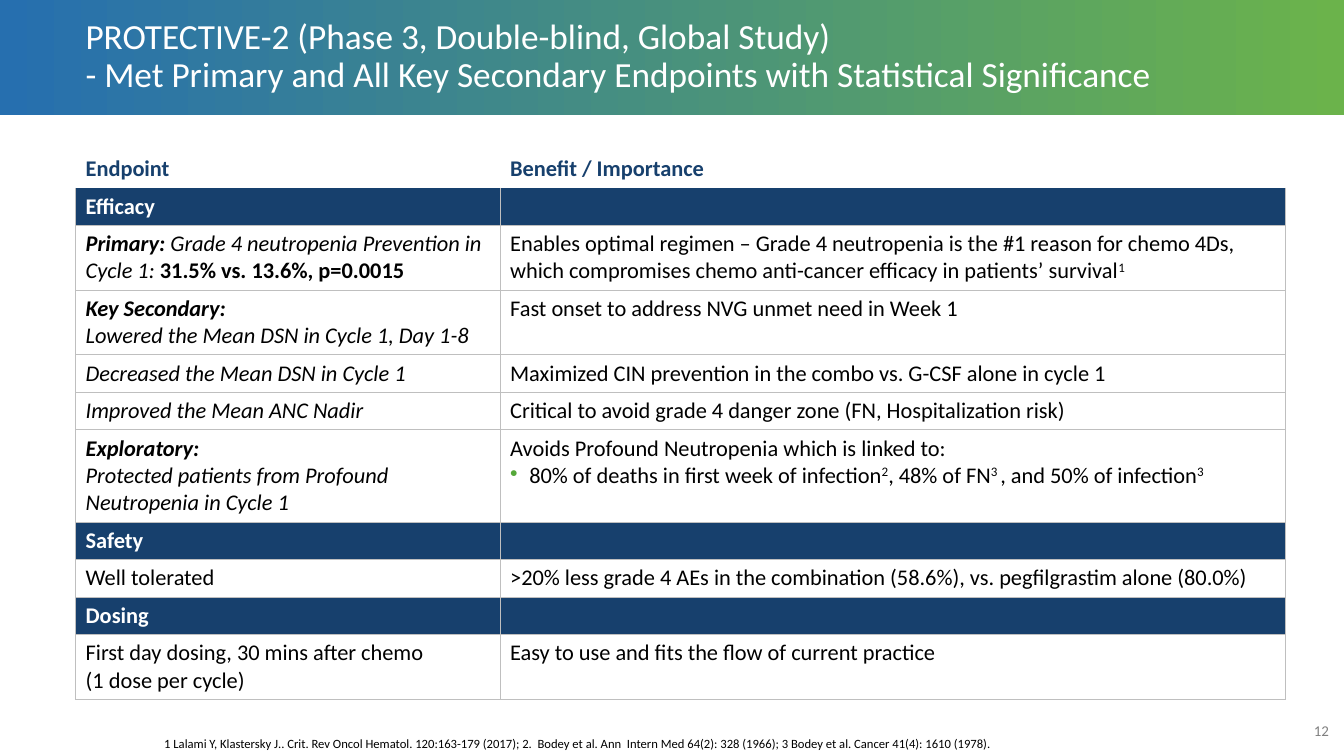
from lxml import etree
from pptx import Presentation
from pptx import util as u
from pptx.dml.color import RGBColor
from pptx.enum import shapes, text
from pptx.oxml import ns

WIDTH, HEIGHT = 13.33, 7.5
MARGIN, BANNER_HEIGHT = 0.75, 1.14
FONT = "Calibri"
LINE_HEIGHT, CELL_PADDING = 0.272, 0.1
BLUE = RGBColor(0x26, 0x6F, 0xAF)
GREEN = RGBColor(0x6B, 0xB3, 0x4B)
BULLET_GREEN = RGBColor(0x55, 0xA8, 0x39)
NAVY = RGBColor(0x17, 0x40, 0x6D)
RULE_GRAY = RGBColor(0xBF, 0xBF, 0xBF)
PAGE_GRAY = RGBColor(0x80, 0x80, 0x80)
WHITE = RGBColor(0xFF, 0xFF, 0xFF)
BLACK = RGBColor(0, 0, 0)

COLUMN_WIDTHS = (4.21, 7.79)
HEADINGS = ("Endpoint", "Benefit / Importance")
SECTIONS = [
    ("Efficacy", [
        (2, [[("Primary: ", "bi"), ("Grade 4 neutropenia Prevention in Cycle 1: ", "i"),
              ("31.5% vs. 13.6%, p=0.0015", "b")]],
         [[("Enables optimal regimen – Grade 4 neutropenia is the #1 reason for chemo 4Ds, "
            "which compromises chemo anti-cancer efficacy in patients’ survival", ""), ("1", "^")]]),
        (2, [[("Key Secondary:", "bi")], [("Lowered the Mean DSN in Cycle 1, Day 1-8", "i")]],
         [[("Fast onset to address NVG unmet need in Week 1", "")]]),
        (1, [[("Decreased the Mean DSN in Cycle 1", "i")]],
         [[("Maximized CIN prevention in the combo vs. G-CSF alone in cycle 1", "")]]),
        (1, [[("Improved the Mean ANC Nadir", "i")]],
         [[("Critical to avoid grade 4 danger zone (FN, Hospitalization risk)", "")]]),
        (3, [[("Exploratory:", "bi")],
             [("Protected patients from Profound Neutropenia in Cycle 1", "i")]],
         [[("Avoids Profound Neutropenia which is linked to:", "")],
          [("80% of deaths in first week of infection", "•"), ("2", "^"), (", 48% of FN", ""),
           ("3 ", "^"), (", and 50% of infection", ""), ("3", "^")]]),
    ]),
    ("Safety", [
        (1, [[("Well tolerated", "")]],
         [[(">20% less grade 4 AEs in the combination (58.6%), "
            "vs. pegfilgrastim alone (80.0%)", "")]]),
    ]),
    ("Dosing", [
        (2, [[("First day dosing, 30 mins after chemo", "")], [("(1 dose per cycle)", "")]],
         [[("Easy to use and fits the flow of current practice", "")]]),
    ]),
]


def inches(*lengths):
    """Convert lengths to slide units."""
    return [u.Inches(length) for length in lengths]


def add_bullet(para):
    """Give a paragraph a green bullet with a hanging indent."""
    properties = para._p.get_or_add_pPr()
    indent = u.Inches(0.19)
    properties.set("marL", str(indent))
    properties.set("indent", str(-indent))
    color = etree.SubElement(properties, ns.qn("a:buClr"))
    etree.SubElement(color, ns.qn("a:srgbClr")).set("val", str(BULLET_GREEN))
    etree.SubElement(properties, ns.qn("a:buChar")).set("char", "•")


def write(frame, paragraphs, size=16, color=BLACK, align=text.PP_ALIGN.LEFT, spacing=None):
    """Fill a frame with paragraphs of (wording, style marks) spans."""
    for index, spans in enumerate(paragraphs):
        para = frame.add_paragraph() if index else frame.paragraphs[0]
        para.alignment = align
        if spacing:
            para.line_spacing = spacing
        if spans[0][1] == "•":
            add_bullet(para)
        for wording, marks in spans:
            for number, line in enumerate(wording.split("\n")):
                if number:
                    para.add_line_break()
                span = para.add_run()
                span.text = line
                span.font.name = FONT
                span.font.size = u.Pt(size)
                span.font.color.rgb = color
                span.font.bold = "b" in marks
                span.font.italic = "i" in marks
                if "^" in marks:
                    span._r.get_or_add_rPr().set("baseline", "30000")


def add_text(page, box, wording, anchor=text.MSO_ANCHOR.MIDDLE, **style):
    """Place a wrapped text box holding one paragraph."""
    frame = page.shapes.add_textbox(*inches(*box)).text_frame
    frame.word_wrap = True
    frame.vertical_anchor = anchor
    write(frame, [[(wording, "")]], **style)


def add_banner(page, box):
    """Draw the gradient band with the title inside it."""
    left, top, width, height = box
    band = page.shapes.add_shape(shapes.MSO_SHAPE.RECTANGLE, *inches(*box))
    band.shadow.inherit = False
    band.line.fill.background()
    band.fill.gradient()
    band.fill.gradient_angle = 0
    for stop, color in zip(band.fill.gradient_stops, (BLUE, GREEN)):
        stop.color.rgb = color
    add_text(page, (left + MARGIN, top, 11.5, height),
             "PROTECTIVE-2 (Phase 3, Double-blind, Global Study)\n"
             "- Met Primary and All Key Secondary Endpoints with Statistical Significance",
             size=25.2, color=WHITE, spacing=0.9)


def set_borders(cell, visible_sides):
    """Rule the listed sides of a cell in gray and clear the others."""
    properties = cell._tc.get_or_add_tcPr()
    for side in "LRTB":
        line = etree.SubElement(properties, ns.qn(f"a:ln{side}"))
        line.set("w", str(u.Pt(0.75)))
        if side in visible_sides:
            fill = etree.SubElement(line, ns.qn("a:solidFill"))
            etree.SubElement(fill, ns.qn("a:srgbClr")).set("val", str(RULE_GRAY))
        else:
            etree.SubElement(line, ns.qn("a:noFill"))


def table_rows():
    """List each row as line count, cell paragraphs, text colour, fill and borders."""
    rows = [(1, [[[(heading, "b")]] for heading in HEADINGS], NAVY, None, "")]
    for number, (section, entries) in enumerate(SECTIONS):
        rows.append((1, [[[(section, "b")]], []], WHITE, NAVY, "LRTB" if number else "LRB"))
        for lines, endpoint, benefit in entries:
            rows.append((lines, [endpoint, benefit], BLACK, None, "LRTB"))
    return rows


def add_endpoint_table(page, box):
    """Build the table of endpoints and benefits."""
    rows = table_rows()
    table = page.shapes.add_table(len(rows), len(COLUMN_WIDTHS), *inches(*box)).table
    table.first_row = table.horz_banding = False
    for column, width in zip(table.columns, COLUMN_WIDTHS):
        column.width = u.Inches(width)
    for row, (lines, contents, color, fill, sides) in zip(table.rows, rows):
        row.height = u.Inches(lines * LINE_HEIGHT + CELL_PADDING)
        for cell, paragraphs in zip(row.cells, contents):
            set_borders(cell, sides)
            if fill:
                cell.fill.solid()
                cell.fill.fore_color.rgb = fill
            else:
                cell.fill.background()
            cell.text_frame.paragraphs[0].font.size = u.Pt(16)
            write(cell.text_frame, paragraphs, color=color)


def add_footer(page, box):
    """Place the references and the page number."""
    left, top, width, height = box
    add_text(page, (left + 1.53, top, 11.05, height),
             "1 Lalami Y, Klastersky J.. Crit. Rev Oncol Hematol. 120:163-179 (2017); "
             "2.  Bodey et al. Ann  Intern Med 64(2): 328 (1966); "
             "3 Bodey et al. Cancer 41(4): 1610 (1978).",
             anchor=text.MSO_ANCHOR.BOTTOM, size=9)
    add_text(page, (left + width - 0.61, top + height / 2, 0.56, 0.28), "12",
             anchor=text.MSO_ANCHOR.TOP, size=10.7, color=PAGE_GRAY, align=text.PP_ALIGN.RIGHT)


def main():
    """Build and save the slide."""
    deck = Presentation()
    deck.slide_width, deck.slide_height = inches(WIDTH, HEIGHT)
    page = deck.slides.add_slide(deck.slide_layouts[6])
    add_banner(page, (0, 0, WIDTH, BANNER_HEIGHT))
    add_footer(page, (0, 6.72, WIDTH, HEIGHT - 6.72))
    add_endpoint_table(page, (MARGIN, 1.49, sum(COLUMN_WIDTHS), 5.37))
    deck.save("out.pptx")


if __name__ == "__main__":
    main()
